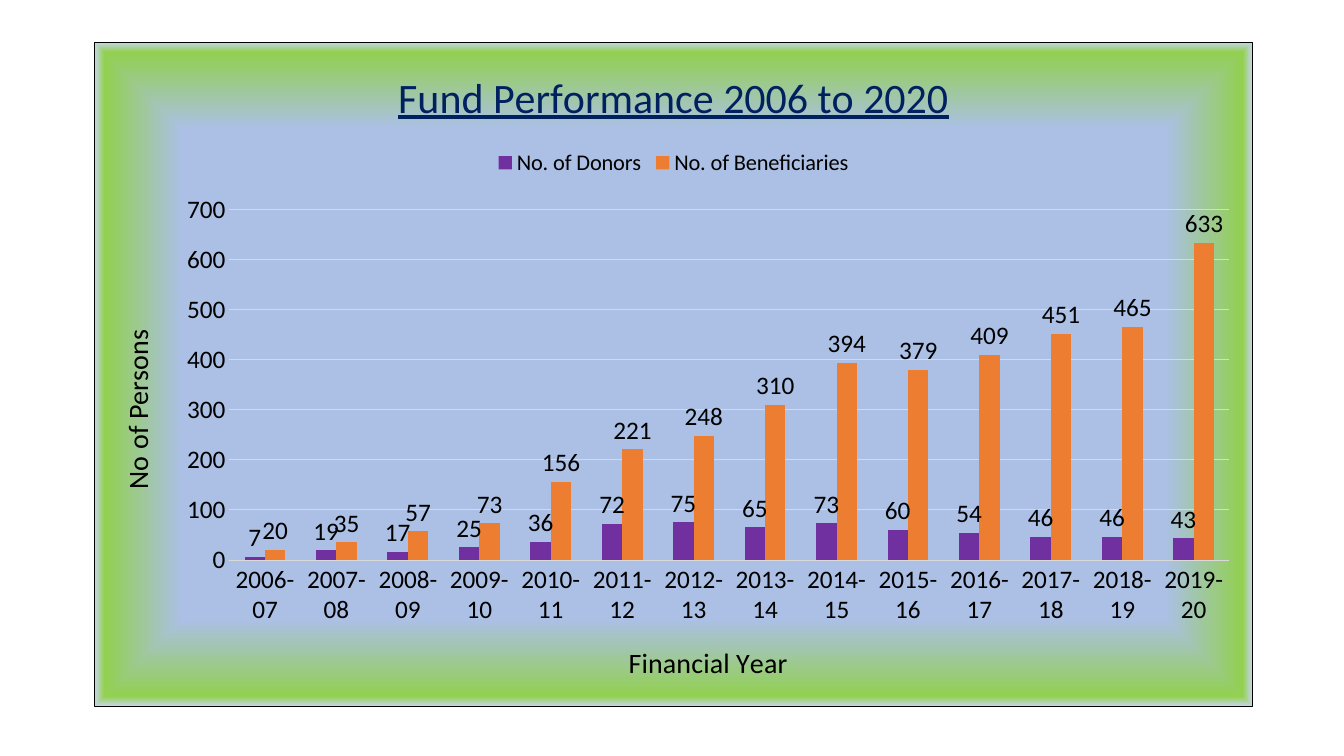
from lxml import etree
from pptx import Presentation
from pptx.chart.data import CategoryChartData
from pptx.dml.color import RGBColor
from pptx.enum.chart import XL_CHART_TYPE, XL_LABEL_POSITION, XL_LEGEND_POSITION, XL_TICK_MARK
from pptx.oxml import parse_xml
from pptx.util import Cm, Pt

CLUSTERED = XL_CHART_TYPE.COLUMN_CLUSTERED
OUTSIDE_END = XL_LABEL_POSITION.OUTSIDE_END
LEGEND_TOP = XL_LEGEND_POSITION.TOP
NO_TICK = XL_TICK_MARK.NONE

BLACK = "000000"
DONORS = [7, 19, 17, 25, 36, 72, 75, 65, 73, 60, 54, 46, 46, 43]
BENEFICIARIES = [20, 35, 57, 73, 156, 221, 248, 310, 394, 379, 409, 451, 465, 633]
SERIES_COLORS = ["7030A0", "ED7D31"]
# Gradient stops from the centre outwards: percent, colour
STOPS = [(74, "ABC0E4"), (74, "ABC0E4"), (97, "92D050"), (100, "C7D5ED")]


def rgb(color):
    return RGBColor.from_string(color)


def set_font(font, size, color=BLACK, **extra):
    values = {"name": "Calibri", "size": Pt(size), "bold": False, **extra}
    for name, value in values.items():
        setattr(font, name, value)
    font.color.rgb = rgb(color)


prs = Presentation()
prs.slide_width, prs.slide_height = Cm(33.87), Cm(19.05)
s = prs.slides.add_slide(prs.slide_layouts[6])

# Chart data
data = CategoryChartData()
data.categories = [f"{year}-{(year + 1) % 100:02}" for year in range(2006, 2020)]
data.add_series("No. of Donors", DONORS)
data.add_series("No. of Beneficiaries", BENEFICIARIES)
chart = s.shapes.add_chart(CLUSTERED, Cm(2.37), Cm(1.05), Cm(29.21), Cm(16.76), data).chart
set_font(chart.font, 10)

# Titles
cat_axis, val_axis = chart.category_axis, chart.value_axis
for owner, title, size, color, underline in [
    (chart, "Fund Performance 2006 to 2020", 30, "002060", True),
    (cat_axis, "Financial Year", 20, BLACK, False),
    (val_axis, "No of Persons", 20, BLACK, False),
]:
    owner.has_title = True
    title_part = owner.chart_title if owner is chart else owner.axis_title
    p = title_part.text_frame.paragraphs[0]
    r = p.add_run()
    r.text = title
    set_font(r.font, size, color, underline=underline)
chart.chart_title.include_in_layout = False

# Axes
for axis in (cat_axis, val_axis):
    axis.major_tick_mark = axis.minor_tick_mark = NO_TICK
    axis.format.line.fill.background()
    set_font(axis.tick_labels.font, 18)
val_axis.minimum_scale, val_axis.maximum_scale, val_axis.major_unit = 0, 700, 100
grid = val_axis.major_gridlines.format.line
grid.color.rgb = rgb("D9D9D9")
grid.width = Pt(0.75)

# Legend
chart.has_legend = True
chart.legend.position = LEGEND_TOP
chart.legend.include_in_layout = False
set_font(chart.legend.font, 16)

# Columns and their values
plot = chart.plots[0]
plot.gap_width, plot.overlap, plot.vary_by_categories = 150, 0, False
for series, color in zip(plot.series, SERIES_COLORS):
    series.format.fill.solid()
    series.format.fill.fore_color.rgb = rgb(color)
    series.invert_if_negative = False
    labels = series.data_labels
    labels.show_value = True
    labels.position = OUTSIDE_END
    set_font(labels.font, 18)

# Chart background and border
stops = "".join(
    f'<a:gs pos="{percent * 1000}"><a:srgbClr val="{color}"/></a:gs>' for percent, color in STOPS
)
background = parse_xml(
    '<c:spPr xmlns:c="http://schemas.openxmlformats.org/drawingml/2006/chart"'
    ' xmlns:a="http://schemas.openxmlformats.org/drawingml/2006/main">'
    f'<a:gradFill><a:gsLst>{stops}</a:gsLst><a:path path="shape">'
    '<a:fillToRect l="50000" t="50000" r="50000" b="50000"/></a:path></a:gradFill>'
    f'<a:ln w="{Pt(0.75)}"><a:solidFill><a:srgbClr val="{BLACK}"/></a:solidFill></a:ln>'
    "</c:spPr>"
)
chart_space = chart.element
for child in chart_space:
    if etree.QName(child).localname == "chart":
        child.addnext(background)
        break

prs.save("out.pptx")
